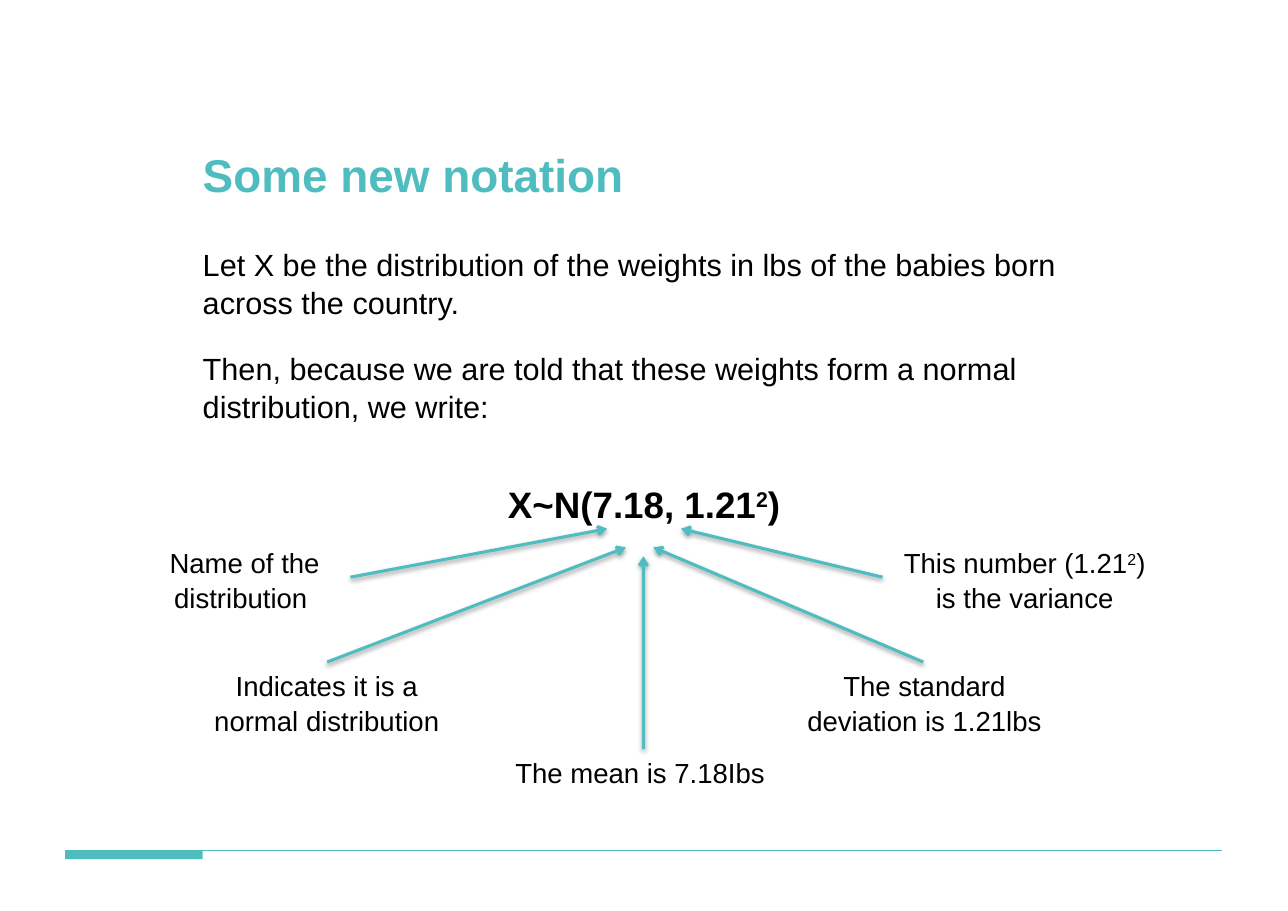
from dataclasses import dataclass

import lxml.etree
import pptx
import pptx.dml.color
import pptx.enum.shapes
import pptx.enum.text
import pptx.oxml
import pptx.oxml.ns
import pptx.util

Inches, Pt = pptx.util.Inches, pptx.util.Pt
ALIGN = pptx.enum.text.PP_ALIGN
FIT = pptx.enum.text.MSO_AUTO_SIZE
qn = pptx.oxml.ns.qn


@dataclass(frozen=True)
class Theme:
    font: str = "Arial"
    accent: str = "4FBCBF"
    ink: str = "000000"
    title_size: int = 30
    formula_size: int = 24
    body_size: int = 20
    label_size: int = 18
    rule_width: float = 1
    arrow_width: float = 2
    body_spacing: float = 1.04
    spacing: float = 1.06


@dataclass(frozen=True)
class Box:
    left: float
    top: float
    width: float
    height: float


@dataclass(frozen=True)
class Callout:
    texts: tuple[str, ...]  # every second text is a superscript
    box: Box
    start: tuple[float, float]
    end: tuple[float, float]


THEME = Theme()
TITLE = "Some new notation"
BODY = (
    "Let X be the distribution of the weights in lbs of the babies born across the country.",
    "Then, because we are told that these weights form a normal distribution, we write:",
)
FORMULA = ("X~N(7.18, 1.21", "2", ")")
CALLOUTS = (
    Callout(("Name of the distribution ",), Box(1.26, 4.89, 1.92, 0.71), (3.18, 5.24), (5.51, 4.8)),
    Callout(("Indicates it is a normal distribution ",), Box(1.84, 6.01, 2.25, 0.71),
            (2.97, 6.01), (5.68, 4.97)),
    Callout(("The mean is 7.18Ibs ",), Box(4.43, 6.8, 2.83, 0.4), (5.84, 6.8), (5.84, 5.05)),
    Callout(("The standard deviation is 1.21lbs",), Box(7.18, 6.01, 2.42, 0.71),
            (8.38, 6.01), (5.93, 4.97)),
    Callout(("This number (1.21", "2", ") is the variance"), Box(8.01, 4.89, 2.58, 0.71),
            (8.01, 5.24), (6.18, 4.8)),
)
SHADOW = (
    '<a:effectLst xmlns:a="http://schemas.openxmlformats.org/drawingml/2006/main">'
    '<a:outerShdw blurRad="40000" dist="20000" dir="5400000" rotWithShape="0">'
    '<a:srgbClr val="000000"><a:alpha val="38000"/></a:srgbClr>'
    "</a:outerShdw></a:effectLst>"
)


def rgb(colour: str) -> pptx.dml.color.RGBColor:
    return pptx.dml.color.RGBColor.from_string(colour)


def style_run(r, size: float, colour: str, bold: bool = False) -> None:
    r.font.name = THEME.font
    r.font.size = Pt(size)
    r.font.bold = bold
    r.font.color.rgb = rgb(colour)


def fill_placeholder(sp, box: Box, text: str, size: float, colour: str,
                     bold: bool = False, gap: float = 0, spacing: float = THEME.spacing) -> None:
    """Place a title or body placeholder and set its plain paragraphs."""
    sp.left, sp.top = Inches(box.left), Inches(box.top)
    sp.width, sp.height = Inches(box.width), Inches(box.height)
    tf = sp.text_frame
    tf.text = text
    tf.word_wrap = True
    tf.auto_size = FIT.NONE
    tf.vertical_anchor = pptx.enum.text.MSO_ANCHOR.TOP
    tf.margin_left = tf.margin_top = tf.margin_right = tf.margin_bottom = 0
    for p in tf.paragraphs:
        pPr = p._p.get_or_add_pPr()
        pPr.set("marL", "0")
        pPr.set("indent", "0")
        lxml.etree.SubElement(pPr, qn("a:buNone"))
        p.alignment = ALIGN.LEFT
        p.line_spacing = spacing
        p.space_before = Pt(0)
        p.space_after = Pt(gap)
        for r in p.runs:
            style_run(r, size, colour, bold)


def add_label(s, box: Box, texts: tuple[str, ...], size: float,
              bold: bool = False, wrap: bool = True) -> None:
    """Add centred text whose every second piece is raised."""
    sp = s.shapes.add_textbox(Inches(box.left), Inches(box.top), Inches(box.width), Inches(box.height))
    tf = sp.text_frame
    tf.word_wrap = wrap
    tf.auto_size = FIT.SHAPE_TO_FIT_TEXT
    p = tf.paragraphs[0]
    p.alignment = ALIGN.CENTER
    p.line_spacing = THEME.spacing
    for i, text in enumerate(texts):
        r = p.add_run()
        r.text = text
        style_run(r, size, THEME.ink, bold)
        if i % 2:
            r.font._element.set("baseline", "30000")


def add_line(s, start: tuple[float, float], end: tuple[float, float],
             width: float, arrow: bool = False) -> None:
    """Add a flat line, or an arrow with a soft shadow."""
    sp = s.shapes.add_connector(pptx.enum.shapes.MSO_CONNECTOR.STRAIGHT,
                                *(Inches(v) for v in start + end))
    sp.line.color.rgb = rgb(THEME.accent)
    sp.line.width = Pt(width)
    spPr = sp._element.spPr
    if arrow:
        lxml.etree.SubElement(sp.line._get_or_add_ln(), qn("a:tailEnd"), type="arrow")
        spPr.append(pptx.oxml.parse_xml(SHADOW))
    else:
        lxml.etree.SubElement(spPr, qn("a:effectLst"))


def main() -> None:
    prs = pptx.Presentation()
    prs.slide_width, prs.slide_height = Inches(11.69), Inches(8.27)
    s = prs.slides.add_slide(prs.slide_layouts[1])

    # Footer rule and its thick start
    add_line(s, (0.59, 7.72), (11.09, 7.72), THEME.rule_width)
    bar = s.shapes.add_shape(pptx.enum.shapes.MSO_SHAPE.RECTANGLE,
                             Inches(0.59), Inches(7.72), Inches(1.25), Inches(0.08))
    bar.shadow.inherit = False
    bar.fill.solid()
    bar.fill.fore_color.rgb = rgb(THEME.accent)
    bar.line.fill.background()

    # Title and explanation
    fill_placeholder(s.shapes.title, Box(1.84, 1.3, 8, 0.64), TITLE,
                     THEME.title_size, THEME.accent, bold=True)
    fill_placeholder(s.placeholders[1], Box(1.84, 2.22, 8, 1.67), "\n".join(BODY),
                     THEME.body_size, THEME.ink, gap=18, spacing=THEME.body_spacing)

    # Formula with its callouts
    add_label(s, Box(4.5, 4.3, 2.69, 0.5), FORMULA, THEME.formula_size, bold=True, wrap=False)
    for callout in CALLOUTS:
        add_label(s, callout.box, callout.texts, THEME.label_size)
        add_line(s, callout.start, callout.end, THEME.arrow_width, arrow=True)

    prs.save("out.pptx")


if __name__ == "__main__":
    main()
